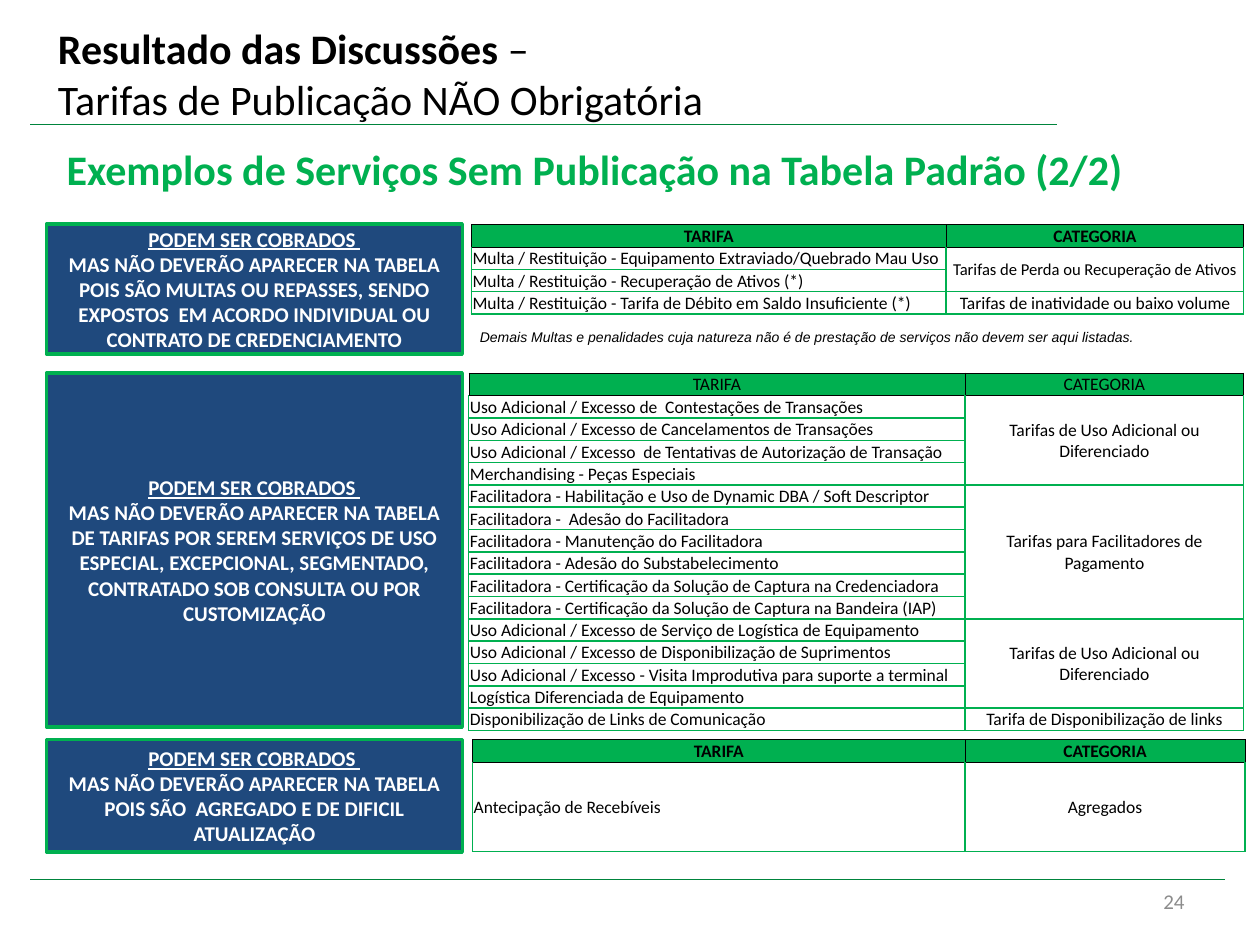
from lxml.etree import SubElement
from pptx import Presentation
from pptx.dml.color import RGBColor
from pptx.enum.shapes import MSO_CONNECTOR, MSO_SHAPE
from pptx.enum.text import MSO_ANCHOR, MSO_AUTO_SIZE, PP_ALIGN
from pptx.oxml.ns import qn
from pptx.util import Inches, Pt

COLORS = {
    "green": "00B050",
    "rule": "00843C",
    "navy": "1F497D",
    "white": "FFFFFF",
    "black": "000000",
    "grey": "8C8C8C",
}
GREEN_BORDER = ("green", 1)
BLACK_BORDER = ("black", 0.25)
HEADER_HEIGHT = 0.18

# Each group is a category and the fees that belong to it
PENALTY_GROUPS = [
    ("Tarifas de Perda ou Recuperação de Ativos", [
        "Multa / Restituição - Equipamento Extraviado/Quebrado Mau Uso",
        "Multa / Restituição - Recuperação de Ativos (*)",
    ]),
    ("Tarifas de inatividade ou baixo volume", [
        "Multa / Restituição - Tarifa de Débito em Saldo Insuficiente (*)",
    ]),
]
SPECIAL_GROUPS = [
    ("Tarifas de Uso Adicional ou Diferenciado", [
        "Uso Adicional / Excesso de  Contestações de Transações",
        "Uso Adicional / Excesso de Cancelamentos de Transações",
        "Uso Adicional / Excesso  de Tentativas de Autorização de Transação",
        "Merchandising - Peças Especiais",
    ]),
    ("Tarifas para Facilitadores de Pagamento", [
        "Facilitadora - Habilitação e Uso de Dynamic DBA / Soft Descriptor",
        "Facilitadora -  Adesão do Facilitadora",
        "Facilitadora - Manutenção do Facilitadora",
        "Facilitadora - Adesão do Substabelecimento",
        "Facilitadora - Certificação da Solução de Captura na Credenciadora",
        "Facilitadora - Certificação da Solução de Captura na Bandeira (IAP)",
    ]),
    ("Tarifas de Uso Adicional ou Diferenciado", [
        "Uso Adicional / Excesso de Serviço de Logística de Equipamento",
        "Uso Adicional / Excesso de Disponibilização de Suprimentos",
        "Uso Adicional / Excesso - Visita Improdutiva para suporte a terminal",
        "Logística Diferenciada de Equipamento",
    ]),
    ("Tarifa de Disponibilização de links", [
        "Disponibilização de Links de Comunicação",
    ]),
]
AGGREGATE_GROUPS = [("Agregados", ["Antecipação de Recebíveis"])]


def rgb(name):
    return RGBColor.from_string(COLORS[name])


def add_text(paragraph, text, size=10, color="black", font="Calibri", bold=False,
             italic=False, underline=False, align=PP_ALIGN.LEFT):
    paragraph.alignment = align
    run = paragraph.add_run()
    run.text = text
    run.font.name = font
    run.font.size = Pt(size)
    run.font.bold = bold
    run.font.italic = italic
    run.font.underline = underline
    run.font.color.rgb = rgb(color)


def add_text_box(slide, left, top, width, height, text,
                 anchor=MSO_ANCHOR.TOP, **text_format):
    box = slide.shapes.add_textbox(*map(Inches, (left, top, width, height)))
    box.text_frame.word_wrap = True
    box.text_frame.vertical_anchor = anchor
    add_text(box.text_frame.paragraphs[0], text, **text_format)


def add_rule(slide, left, right, y):
    line = slide.shapes.add_connector(
        MSO_CONNECTOR.STRAIGHT, Inches(left), Inches(y), Inches(right), Inches(y))
    line.line.color.rgb = rgb("rule")
    line.line.width = Pt(0.75)
    SubElement(line._element.spPr, qn("a:effectLst"))


def add_statement(slide, top, height, text):
    shape = slide.shapes.add_shape(
        MSO_SHAPE.RECTANGLE, Inches(0.37), Inches(top), Inches(3.3), Inches(height))
    shape.shadow.inherit = False
    shape.fill.solid()
    shape.fill.fore_color.rgb = rgb("navy")
    shape.line.color.rgb = rgb("green")
    shape.line.width = Pt(2)
    frame = shape.text_frame
    frame.word_wrap = True
    frame.vertical_anchor = MSO_ANCHOR.MIDDLE
    text_format = dict(size=12, color="white", bold=True, align=PP_ALIGN.CENTER)
    add_text(frame.paragraphs[0], "PODEM SER COBRADOS ", underline=True, **text_format)
    add_text(frame.add_paragraph(), text, **text_format)


def set_borders(cell, border, top):
    properties = cell._tc.get_or_add_tcPr()
    for side in "LRTB":
        color, width = top if side == "T" else border
        line = SubElement(properties, qn(f"a:ln{side}"), w=str(int(Pt(width))))
        fill = SubElement(line, qn("a:solidFill"))
        SubElement(fill, qn("a:srgbClr"), val=COLORS[color])


def format_cell(cell, fill, border, top):
    cell.margin_left = cell.margin_right = cell.margin_top = Inches(0.01)
    cell.margin_bottom = 0
    cell.vertical_anchor = MSO_ANCHOR.MIDDLE
    set_borders(cell, border, top)
    if fill:
        cell.fill.solid()
        cell.fill.fore_color.rgb = rgb(fill)
    else:
        cell.fill.background()


def add_fee_table(slide, left, top, height, widths, groups,
                  header_bold=True, fill=None, first_category_size=10):
    row_count = 1 + sum(len(fees) for _, fees in groups)
    table = slide.shapes.add_table(
        row_count, 2, Inches(left), Inches(top), Inches(sum(widths)), Inches(height)).table
    table.first_row = table.horz_banding = False
    for column, width in zip(table.columns, widths):
        column.width = Inches(width)
    for index, row in enumerate(table.rows):
        row.height = Inches((height - HEADER_HEIGHT) / (row_count - 1) if index
                            else HEADER_HEIGHT)
        for cell in row.cells:
            if index == 0:
                format_cell(cell, "green", BLACK_BORDER, BLACK_BORDER)
            else:
                format_cell(cell, fill, GREEN_BORDER,
                            BLACK_BORDER if index == 1 else GREEN_BORDER)

    # Header
    for column, heading in enumerate(("TARIFA", "CATEGORIA")):
        add_text(table.cell(0, column).text_frame.paragraphs[0], heading,
                 bold=header_bold, align=PP_ALIGN.CENTER)

    # Fees, with one merged category cell per group
    start = 1
    for category, fees in groups:
        for offset, fee in enumerate(fees):
            add_text(table.cell(start + offset, 0).text_frame.paragraphs[0], fee)
        category_cell = table.cell(start, 1)
        if len(fees) > 1:
            category_cell.merge(table.cell(start + len(fees) - 1, 1))
        add_text(category_cell.text_frame.paragraphs[0], category,
                 size=first_category_size if start == 1 else 10, align=PP_ALIGN.CENTER)
        start += len(fees)


def set_title(slide):
    title = slide.shapes.title
    title.left, title.top, title.width, title.height = map(Inches, (0.42, 0.29, 7.91, 0.58))
    frame = title.text_frame
    frame.auto_size = MSO_AUTO_SIZE.NONE
    frame.word_wrap = True
    frame.vertical_anchor = MSO_ANCHOR.MIDDLE
    frame.margin_left = frame.margin_right = Inches(0.04)
    frame.margin_top = frame.margin_bottom = Inches(0.04)
    paragraph = frame.paragraphs[0]
    add_text(paragraph, "Resultado das Discussões ", size=24, bold=True)
    add_text(paragraph, "–", size=24)
    paragraph.add_line_break()
    add_text(paragraph, "Tarifas de Publicação NÃO Obrigatória", size=24)


def main():
    presentation = Presentation()
    presentation.slide_width, presentation.slide_height = Inches(10), Inches(7.5)
    slide = presentation.slides.add_slide(presentation.slide_layouts[5])

    # Frame of the page
    add_rule(slide, 0.24, 8.39, 0.99)
    add_rule(slide, 0.24, 9.72, 6.98)
    add_text_box(slide, 7.17, 6.95, 2.33, 0.4, "24", anchor=MSO_ANCHOR.MIDDLE,
                 size=12, color="grey", align=PP_ALIGN.RIGHT)
    set_title(slide)
    add_text_box(slide, 0.43, 1.09, 9.45, 0.5,
                 "Exemplos de Serviços Sem Publicação na Tabela Padrão (2/2)",
                 size=24, color="green", bold=True)

    # Penalties and pass-through charges
    add_statement(slide, 1.78, 1.03,
                  "MAS NÃO DEVERÃO APARECER NA TABELA POIS SÃO MULTAS OU REPASSES, SENDO "
                  "EXPOSTOS  EM ACORDO INDIVIDUAL OU CONTRATO DE CREDENCIAMENTO")
    add_fee_table(slide, 3.74, 1.78, 0.7, (3.77, 2.36), PENALTY_GROUPS,
                  first_category_size=9.5)
    add_text_box(slide, 3.71, 2.56, 6.1, 0.25,
                 "Demais Multas e penalidades cuja natureza não é de prestação de serviços "
                 "não devem ser aqui listadas.", size=8, font="Arial", italic=True)

    # Special services
    add_statement(slide, 2.96, 2.81,
                  "MAS NÃO DEVERÃO APARECER NA TABELA DE TARIFAS POR SEREM SERVIÇOS DE USO "
                  "ESPECIAL, EXCEPCIONAL, SEGMENTADO, CONTRATADO SOB CONSULTA OU POR "
                  "CUSTOMIZAÇÃO")
    add_fee_table(slide, 3.72, 2.96, 2.82, (3.94, 2.21), SPECIAL_GROUPS,
                  header_bold=False, fill="white")

    # Aggregates
    add_statement(slide, 5.87, 0.89,
                  "MAS NÃO DEVERÃO APARECER NA TABELA POIS SÃO  AGREGADO E DE DIFICIL "
                  "ATUALIZAÇÃO")
    add_fee_table(slide, 3.75, 5.87, 0.89, (3.91, 2.22), AGGREGATE_GROUPS)

    presentation.save("out.pptx")


if __name__ == "__main__":
    main()
